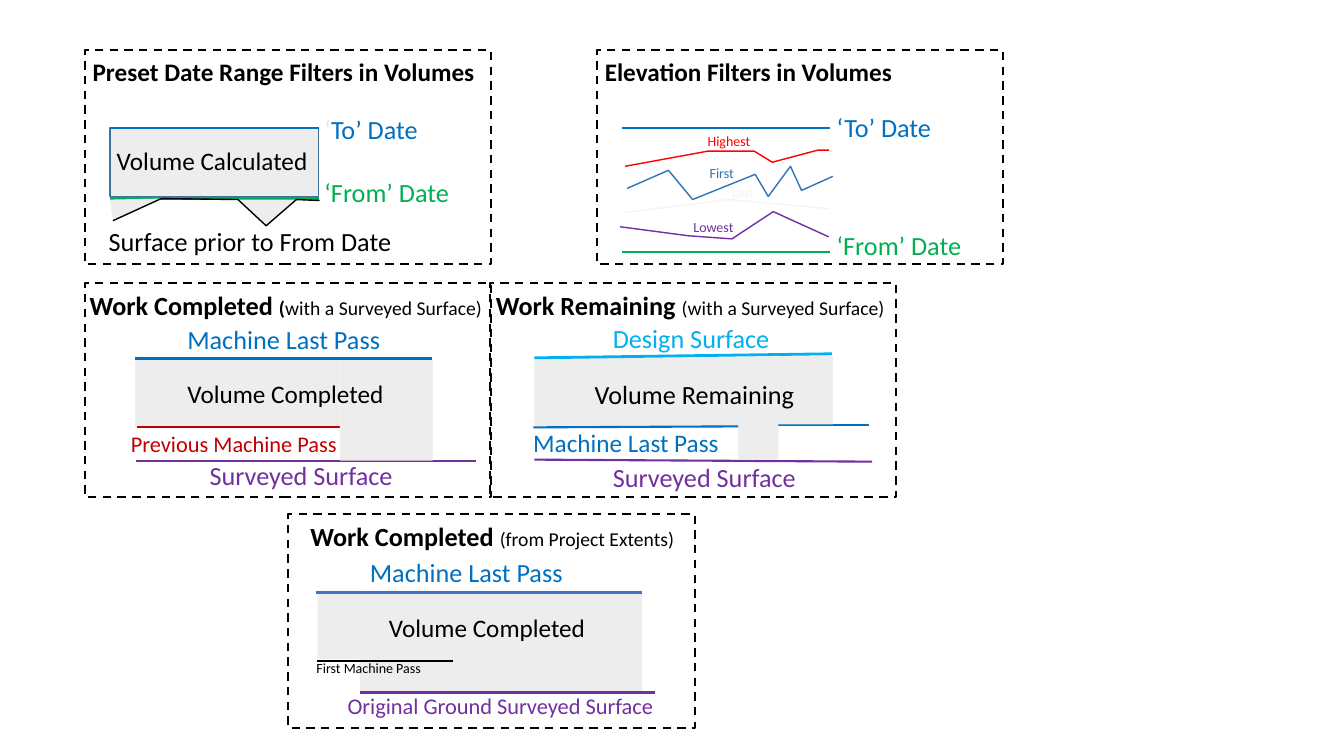
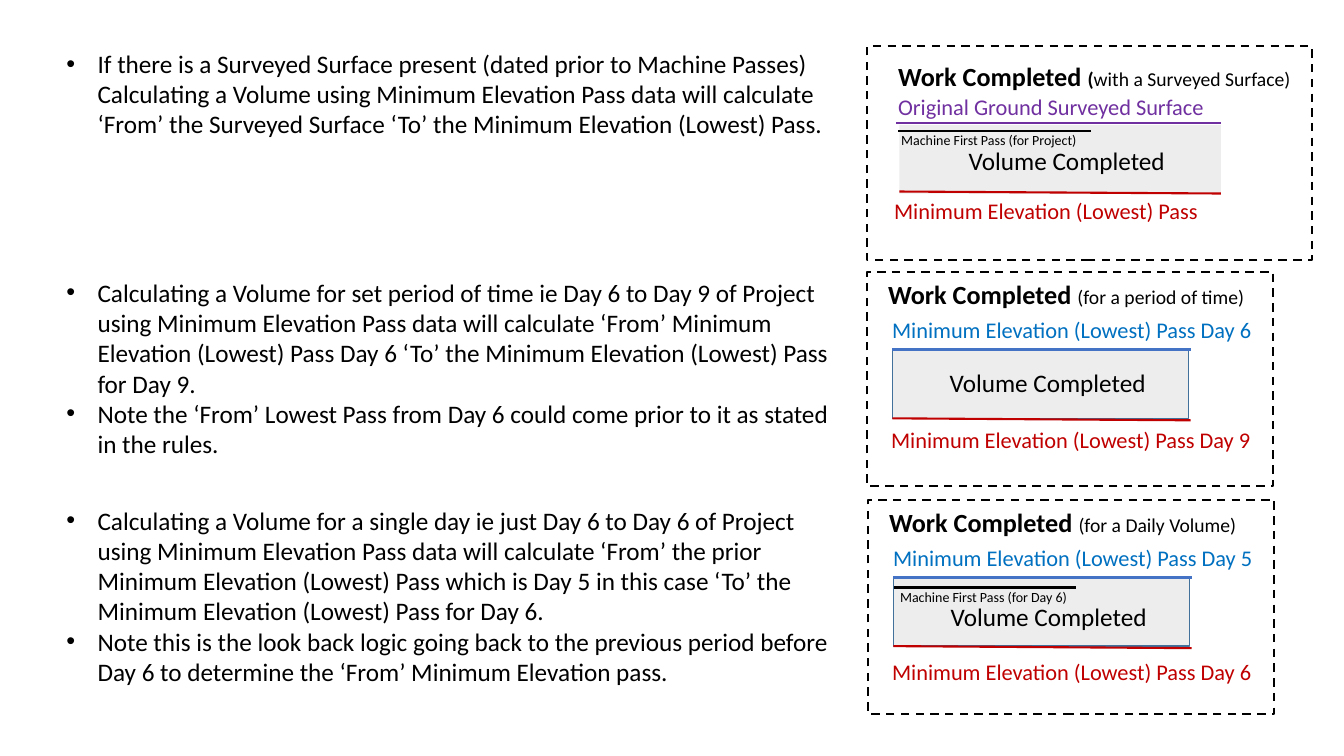
import pptx
import pptx.util
import pptx.dml.color
import pptx.enum.dml
import pptx.enum.shapes
import pptx.enum.text
import pptx.oxml.ns
from lxml import etree

PX = 9144  # EMU in one px, 100 px to the inch
FONT = "Calibri"
HEX = pptx.dml.color.RGBColor.from_string
BLACK, GREY, PALE, FAINT = map(HEX, ("000000", "EDEDED", "E7E6E6", "F5F4F4"))
BLUE, ROYAL, STEEL, CYAN = map(HEX, ("0070C0", "4472C4", "2E75B5", "00B0F0"))
RED, BRIGHT, GREEN, PURPLE = map(HEX, ("C00000", "FF0000", "00B050", "7030A0"))
EDGE = HEX("42719B")
BIG, MID, LOW, SUB, TINY = 18.7, 18, 16, 14, 10
THIN, LINE, THICK = 1, 1.5, 2
WIDE, HIGH, SLAB, TEXT = 403, 212, 68, 430  # panel, slab height, label width

# Content: panel x, y, title shift, title runs, then parts from back to front
# slab: x, y, w, edge, h    line: x, y, length, colour, points, drop
# path: dots, line, fill    text: x, y, words, colour, size
SOIL = [(112, 219), (160, 197), (236, 198), (264, 224), (294, 198), (317, 199)]

FILTERS = [
    (84, 50, -2, ["Preset Date Range Filters in Volumes"], [
        ("slab", 109, 127, 207, EDGE),
        ("line", 109, 197, 207, GREEN),
        ("text", 312, 107, [("‘", {"color": PALE}), ("To’ Date", {})], BLUE, BIG),
        ("line", 109, 127, 207, BLUE, THICK),
        ("text", 312, 170, "‘From’ Date", GREEN, BIG),
        ("text", 106, 139, "Volume Calculated", BLACK, MID),
        ("path", [(109, 198), *SOIL[:2]], None, GREY),
        ("path", SOIL[2:5], None, GREY),
        ("path", SOIL, BLACK, None),
        ("text", 98, 219, "Surface prior to From Date", BLACK, BIG),
    ]),
    (592, 50, -2, ["Elevation Filters in Volumes"], [
        ("line", 617, 250, 206, GREEN),
        ("text", 820, 106, "‘To’ Date", BLUE, BIG),
        ("line", 617, 127, 206, BLUE, THICK),
        ("text", 820, 223, "‘From’ Date", GREEN, BIG),
        ("path", [(615, 225), (683, 234), (726, 237), (767, 210), (822, 235)], PURPLE, None),
        ("path", [(620, 165), (702, 150), (748, 150), (766, 161), (811, 149), (822, 149)],
         BRIGHT, None),
        ("path", [(622, 187), (663, 169), (687, 198), (749, 173), (762, 195), (784, 165),
                  (795, 189), (826, 175)], STEEL, None),
        ("path", [(620, 211), (723, 198), (822, 207)], FAINT, None),
        ("text", 692, 127, "Highest", BRIGHT, TINY),
        ("text", 678, 212, "Lowest", PURPLE, TINY),
        ("text", 694, 158, "First", STEEL, TINY),
        ("text", 716, 177, "Last", FAINT, TINY),
    ]),
    (84, 281, -5, ["Work Completed ", "(", "with a Surveyed Surface)"], [
        ("slab", 134, 356, 203),
        ("line", 136, 424, 201, RED),
        ("line", 135, 457, 337, PURPLE),
        ("text", 198, 451, "Surveyed Surface", PURPLE, BIG),
        ("slab", 337, 355, 92, None, 102),
        ("text", 176, 316, "Machine Last Pass", BLUE, BIG),
        ("line", 134, 356, 294, BLUE, THICK),
        ("text", 120, 422, "Previous Machine Pass", RED, LOW),
        ("text", 176, 370, "Volume Completed", BLACK, MID),
    ]),
    (486, 281, -4, ["Work Remaining ", "", "(with a Surveyed Surface)"], [
        ("slab", 530, 355, 202),
        ("line", 772, 422, 90, BLUE),
        ("line", 530, 456, 335, PURPLE, LINE, 2),
        ("text", 598, 453, "Surveyed Surface", PURPLE, BIG),
        ("slab", 732, 354, 40, None, 102),
        ("slab", 772, 353, 54),
        ("text", 580, 370, "Volume Remaining", BLACK, BIG),
        ("line", 530, 355, 295, CYAN, THICK, -4),
        ("text", 598, 315, "Design Surface", CYAN, BIG),
        ("text", 519, 419, "Machine Last Pass", BLUE, MID),
        ("line", 529, 424, 203, BLUE, LINE, -1),
    ]),
    (286, 510, 12, ["Work Completed ", "", "(from Project Extents)"], [
        ("slab", 357, 588, 280, None, 99),
        ("slab", 315, 586, 43),
        ("line", 314, 656, 135, BLACK),
        ("text", 357, 547, "Machine Last Pass", BLUE, BIG),
        ("line", 313, 588, 324, ROYAL, THICK),
        ("text", 304, 649, "First Machine Pass", BLACK, TINY),
        ("line", 357, 687, 293, PURPLE),
        ("text", 335, 682, "Original Ground Surveyed Surface", PURPLE, LOW),
        ("text", 376, 603, "Volume Completed", BLACK, MID),
    ]),
]


def period(x, y, rest, start, end, word, foot, extra=()):
    """Panel of a volume between two lowest passes."""
    name = "Minimum Elevation (Lowest) Pass Day "
    left, top = x + 25, y + 77
    return (x, y, 11, ["Work Completed ", "", rest], [
        ("slab", left, top, 294, EDGE),
        ("line", left, top + SLAB, 296, RED, LINE, 2),
        ("text", left - 10, y + 39, name + start, BLUE, LOW),
        ("line", left, top, 296, ROYAL, THICK),
        ("text", left - 11, foot, name + end, RED, LOW),
        ("text", left + 47, word, "Volume Completed", BLACK, MID),
        *extra])


LOWEST = [
    (860, 46, 21, ["Work Completed ", "(", "with a Surveyed Surface)"], [
        ("slab", 892, 124, 319),
        ("line", 889, 122, 322, PURPLE),
        ("text", 881, 87, "Original Ground Surveyed Surface", PURPLE, LOW),
        ("text", 951, 139, "Volume Completed", BLACK, MID),
        ("line", 892, 190, 319, RED, LINE, 2),
        ("line", 891, 130, 191, BLACK),
        ("text", 884, 126, "Machine First Pass (for Project)", BLACK, TINY),
        ("text", 877, 191, "Minimum Elevation (Lowest) Pass", RED, LOW),
    ], 441, 9),
    period(860, 270, "(for a period of time)", "6", "9", 359, 418),
    period(861, 496, "(for a Daily Volume)", "5", "6", 592, 648, [
        ("text", 883, 579, "Machine First Pass (for Day 6)", BLACK, TINY),
        ("line", 887, 583, 180, BLACK, THICK)]),
]

# Rules beside the panels: top and points
RULES = [
    (43, ["If there is a Surveyed Surface present (dated prior to Machine Passes) "
          "Calculating a Volume using Minimum Elevation Pass data will calculate ‘From’ "
          "the Surveyed Surface ‘To’ the Minimum Elevation (Lowest) Pass."]),
    (270, ["Calculating a Volume for set period of time ie Day 6 to Day 9 of Project "
           "using Minimum Elevation Pass data will calculate ‘From’ Minimum Elevation "
           "(Lowest) Pass Day 6 ‘To’ the Minimum Elevation (Lowest) Pass for Day 9.",
           "Note the ‘From’ Lowest Pass from Day 6 could come prior to it as stated in "
           "the rules."]),
    (496, ["Calculating a Volume for a single day ie just Day 6 to Day 6 of Project "
           "using Minimum Elevation Pass data will calculate ‘From’ the prior Minimum "
           "Elevation (Lowest) Pass which is Day 5 in this case ‘To’ the Minimum "
           "Elevation (Lowest) Pass for Day 6.",
           "Note this is the look back logic going back to the previous period before "
           "Day 6 to determine the ‘From’ Minimum Elevation pass."]),
]


# Drawing helpers
def paint(shape, fill, edge, points=THIN):
    shape.shadow.inherit = False
    if fill is None:
        shape.fill.background()
    else:
        shape.fill.solid()
        shape.fill.fore_color.rgb = fill
    if edge is None:
        shape.line.fill.background()
    else:
        shape.line.color.rgb = edge
        shape.line.width = pptx.util.Pt(points)


def add_box(slide, x, y, w, edge=None, h=SLAB, fill=GREY, points=THIN):
    shape = slide.shapes.add_shape(pptx.enum.shapes.MSO_SHAPE.RECTANGLE,
                                   x * PX, y * PX, w * PX, h * PX)
    paint(shape, fill, edge, points)
    return shape


def add_line(slide, x, y, length, color, points=LINE, drop=0):
    line = slide.shapes.add_connector(pptx.enum.shapes.MSO_CONNECTOR.STRAIGHT, x * PX,
                                      y * PX, (x + length) * PX, (y + drop) * PX)
    line.line.color.rgb = color
    line.line.width = pptx.util.Pt(points)
    etree.SubElement(line._element.spPr, pptx.oxml.ns.qn("a:effectLst"))


def add_path(slide, dots, edge, fill):
    pen = slide.shapes.build_freeform(*dots[0], scale=PX)
    pen.add_line_segments(dots[1:], close=fill is not None)
    paint(pen.convert_to_shape(), fill, edge)


def set_bullet(para):
    props = para._p.get_or_add_pPr()
    props.set("marL", str(31 * PX))
    props.set("indent", str(-31 * PX))
    font = etree.SubElement(props, pptx.oxml.ns.qn("a:buFont"))
    font.set("typeface", "Arial")
    etree.SubElement(props, pptx.oxml.ns.qn("a:buChar")).set("char", "•")


def add_text(slide, x, y, words, color=BLACK, size=MID, w=TEXT, bullet=False):
    """Words are a string or runs; with bullet, a list of paragraphs."""
    high = round(size * 1.7 + 10)
    frame = slide.shapes.add_textbox(x * PX, y * PX, w * PX, high * PX).text_frame
    frame.word_wrap = True
    frame.auto_size = pptx.enum.text.MSO_AUTO_SIZE.SHAPE_TO_FIT_TEXT
    for i, runs in enumerate(words if bullet else [words]):
        para = frame.add_paragraph() if i else frame.paragraphs[0]
        if bullet:
            set_bullet(para)
        for part, form in [(runs, {})] if isinstance(runs, str) else runs:
            run = para.add_run()
            run.text = part
            run.font.name = FONT
            run.font.size = pptx.util.Pt(form.get("size", size))
            run.font.bold = form.get("bold", False)
            run.font.color.rgb = form.get("color", color)


DRAW = {"slab": add_box, "line": add_line, "path": add_path, "text": add_text}


def add_panel(slide, x, y, shift, title, parts, w=WIDE, down=1):
    for kind, *args in parts:
        DRAW[kind](slide, *args)
    rim = add_box(slide, x, y, w, BLACK, HIGH, None, LINE)
    rim.line.dash_style = pptx.enum.dml.MSO_LINE.DASH
    size = BIG if len(title) > 1 else MID
    forms = [{"bold": True}, {"bold": True, "size": SUB}, {"size": SUB}]
    runs = [(part, form) for part, form in zip(title, forms) if part]
    add_text(slide, x + shift, y + down, runs, size=size)


def main():
    deck = pptx.Presentation()
    deck.slide_width, deck.slide_height = 1333 * PX, 750 * PX
    for panels, rules in [(FILTERS, []), (LOWEST, RULES)]:
        slide = deck.slides.add_slide(deck.slide_layouts[6])
        for panel in panels:
            add_panel(slide, *panel)
        for top, points in rules:
            add_text(slide, 56, top, points, w=790, bullet=True)
    deck.save("out.pptx")


if __name__ == "__main__":
    main()
